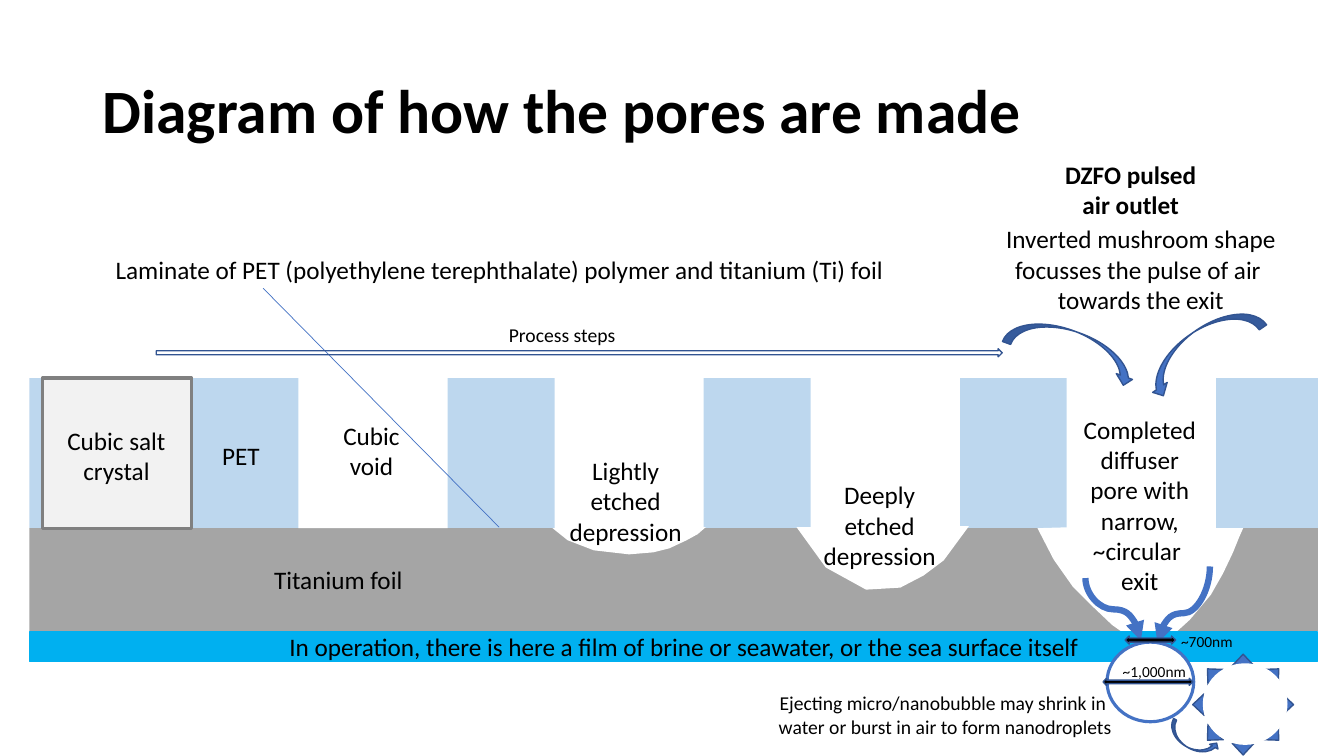
from pptx import Presentation
from pptx.dml.color import RGBColor
from pptx.enum.shapes import MSO_CONNECTOR, MSO_SHAPE
from pptx.enum.text import MSO_ANCHOR, PP_ALIGN
from pptx.oxml.ns import qn
from pptx.util import Inches, Pt
from lxml.etree import SubElement

THEME = {
    "font": "Calibri",
    "title": 44, "body": 18, "note": 14, "small": 11,
    "black": "000000", "white": "FFFFFF", "pet": "BDD7EE",
    "titanium": "A5A5A5", "salt": "F2F2F2", "salt_edge": "808080",
    "blue": "4472C4", "outline": "325491", "water": "00B0F0",
}

deck = Presentation()
deck.slide_width = Inches(13.33)
deck.slide_height = Inches(7.5)
page = deck.slides.add_slide(deck.slide_layouts[6])


def add_text(text, left, top, width, height, size="body", bold=False,
             align=PP_ALIGN.CENTER, wrap=False, anchor=MSO_ANCHOR.TOP, spacing=1.0):
    box = page.shapes.add_textbox(Inches(left), Inches(top), Inches(width), Inches(height))
    frame = box.text_frame
    frame.word_wrap = wrap
    frame.vertical_anchor = anchor
    for index, line in enumerate(text.split("\n")):
        para = frame.paragraphs[0] if index == 0 else frame.add_paragraph()
        para.alignment = align
        para.line_spacing = spacing
        span = para.add_run()
        span.text = line
        span.font.name = THEME["font"]
        span.font.size = Pt(THEME[size])
        span.font.bold = bold
        span.font.color.rgb = RGBColor.from_string(THEME["black"])


def add_figure(kind, left, top, width, height, fill=None, line=None,
               weight=1, rotation=0, adjustments=()):
    figure = page.shapes.add_shape(kind, Inches(left), Inches(top), Inches(width), Inches(height))
    figure.shadow.inherit = False
    figure.rotation = rotation
    for index, value in enumerate(adjustments):
        figure.adjustments[index] = value
    if fill:
        figure.fill.solid()
        figure.fill.fore_color.rgb = RGBColor.from_string(THEME[fill])
    else:
        figure.fill.background()
    if line:
        figure.line.color.rgb = RGBColor.from_string(THEME[line])
        figure.line.width = Pt(weight)
    else:
        figure.line.fill.background()


add_text("Diagram of how the pores are made", 0.92, 0.4, 11.5, 1.45, size="title", bold=True,
         align=PP_ALIGN.LEFT, wrap=True, anchor=MSO_ANCHOR.MIDDLE, spacing=0.9)

add_figure(MSO_SHAPE.RECTANGLE, 0.29, 3.75, 12.78, 1.49, fill="pet")
add_figure(MSO_SHAPE.RECTANGLE, 0.29, 5.24, 12.78, 1.02, fill="titanium")
add_figure(MSO_SHAPE.RECTANGLE, 0.42, 3.75, 1.48, 1.49, fill="salt", line="salt_edge", weight=2.25)
for step in range(1, 5):
    add_figure(MSO_SHAPE.RECTANGLE, 0.42 + 2.54 * step, 3.75, 1.48, 1.49, fill="white")

deep_pit = [(7.9, 5.23), (8.19, 5.63), (8.59, 5.85), (8.93, 5.83), (9.16, 5.71),
            (9.36, 5.56), (9.61, 5.22)]
finished_pore = [(10.29, 5.24), (10.45, 5.55), (10.64, 5.82), (10.83, 6.01), (11.03, 6.2),
                 (11.2, 6.32), (11.59, 6.34), (11.8, 6.15), (12.01, 5.9), (12.13, 5.69),
                 (12.23, 5.48), (12.29, 5.33), (12.33, 5.24), (10.63, 5.23)]
light_pit = [(5.48, 5.24), (5.63, 5.36), (5.89, 5.46), (6.24, 5.5), (6.48, 5.48),
             (6.64, 5.44), (6.81, 5.36), (6.92, 5.3), (7, 5.23)]
for outline in (deep_pit, finished_pore, light_pit):
    points = [(Inches(x), Inches(y)) for x, y in outline]
    builder = page.shapes.build_freeform(*points[0])
    builder.add_line_segments(points[1:], close=True)
    cavity = builder.convert_to_shape()
    cavity.shadow.inherit = False
    cavity.fill.solid()
    cavity.fill.fore_color.rgb = RGBColor.from_string(THEME["white"])
    cavity.line.fill.background()

for text, left, top, width, height in (
    ("Cubic salt\ncrystal", 0.56, 4.17, 1.19, 0.71),
    ("Cubic\nvoid", 3.3, 4.12, 0.77, 0.71),
    ("Lightly\netched\ndepression", 5.54, 4.47, 1.33, 1.01),
    ("Deeply\netched\ndepression", 8.06, 4.71, 1.33, 1.01),
    ("Completed\ndiffuser\npore with\nnarrow,\n~circular \nexit", 10.64, 4.06, 1.33, 1.92),
    ("Titanium foil", 2.61, 5.55, 1.49, 0.4),
    ("PET", 2.1, 4.32, 0.58, 0.4),
    ("Laminate of PET (polyethylene terephthalate) polymer and titanium (Ti) foil",
     1, 2.47, 7.91, 0.4),
    ("Inverted mushroom shape\nfocusses the pulse of air \ntowards the exit",
     9.86, 2.17, 2.91, 1.01),
):
    add_text(text, left, top, width, height)
add_text("DZFO pulsed\nair outlet", 10.46, 1.53, 1.51, 0.71, bold=True)

add_figure(MSO_SHAPE.CURVED_DOWN_ARROW, 9.96, 3.29, 1.36, 0.34,
           fill="blue", line="outline", rotation=19.9)
add_figure(MSO_SHAPE.CURVED_RIGHT_ARROW, 11.74, 2.79, 0.35, 1.33,
           fill="blue", line="outline", rotation=55.5)
add_figure(MSO_SHAPE.RECTANGLE, 0.29, 6.27, 12.78, 0.29, fill="water", line="water")

for kind, start, end, weight, rotation, bend in (
    (MSO_CONNECTOR.STRAIGHT, (2.61, 2.86), (4.95, 5.23), 0.5, 0, None),
    (MSO_CONNECTOR.CURVE, (11.35, 5.77), (10.73, 6.32), 4.5, 270, 0.5),
    (MSO_CONNECTOR.CURVE, (11.36, 5.74), (12.12, 6.26), 4.5, 90, 0.61),
):
    link = page.shapes.add_connector(kind, *map(Inches, start + end))
    link.line.color.rgb = RGBColor.from_string(THEME["blue"])
    link.line.width = Pt(weight)
    properties = link._element.spPr
    SubElement(properties, qn("a:effectLst"))
    if bend:
        properties.find(qn("a:xfrm")).set("rot", str(rotation * 60000))
        guides = properties.find(qn("a:prstGeom")).find(qn("a:avLst"))
        SubElement(guides, qn("a:gd"), name="adj1", fmla=f"val {round(bend * 100000)}")
        SubElement(properties.find(qn("a:ln")), qn("a:tailEnd"), type="triangle")

add_figure(MSO_SHAPE.OVAL, 10.98, 6.37, 0.86, 0.79, fill="white", line="blue", weight=2.25)
add_text("In operation, there is here a film of brine or seawater, or the sea surface itself",
         2.75, 6.21, 8.07, 0.4)
add_text("Ejecting micro/nanobubble may shrink in \nwater or burst in air to form nanodroplets",
         6.82, 6.81, 5.11, 0.57, size="note", wrap=True)

add_figure(MSO_SHAPE.SUN, 11.83, 6.49, 1, 1, fill="blue", line="outline", adjustments=(0.125,))
add_figure(MSO_SHAPE.OVAL, 11.93, 6.58, 0.84, 0.81, fill="white")
add_figure(MSO_SHAPE.CURVED_RIGHT_ARROW, 11.74, 7.07, 0.18, 0.54, fill="blue", line="outline",
           rotation=299.8, adjustments=(0.19, 0.53, 0.25))
add_figure(MSO_SHAPE.LEFT_RIGHT_ARROW, 10.94, 6.73, 0.89, 0.07, fill="black", line="outline")
add_figure(MSO_SHAPE.LEFT_RIGHT_ARROW, 11.16, 6.31, 0.5, 0.08, fill="black", line="outline")
add_text("~700nm", 11.61, 6.22, 0.72, 0.29, size="small")
add_text("~1,000nm", 11.03, 6.52, 0.84, 0.29, size="small")

add_figure(MSO_SHAPE.RIGHT_ARROW, 1.55, 3.46, 8.39, 0.08, line="outline")
add_text("Process steps", 4.94, 3.15, 1.27, 0.34, size="note")

deck.save("out.pptx")
